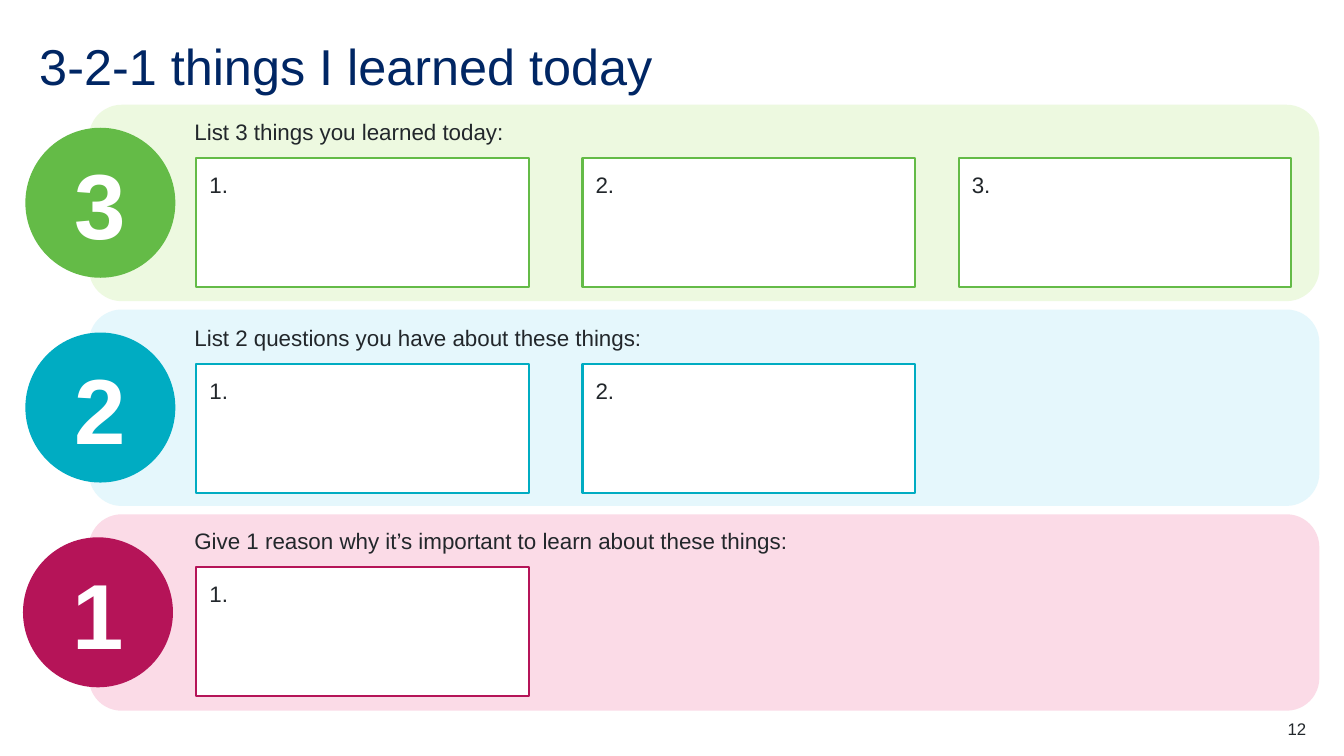
from dataclasses import dataclass

from pptx import Presentation
from pptx.dml.color import RGBColor
from pptx.enum.shapes import MSO_SHAPE
from pptx.enum.text import MSO_ANCHOR, PP_ALIGN
from pptx.shapes.autoshape import Shape
from pptx.slide import Slide
from pptx.util import Cm, Pt

FONT = "Arial"
NAVY, INK, WHITE = "002664", "22272B", "FFFFFF"

BAND_LEFT, BAND_WIDTH, BAND_HEIGHT = 2.24, 31.01, 4.95
FIRST_BAND_TOP, BAND_PITCH = 2.64, 5.16
CIRCLE_SIZE, CIRCLE_DROP = 3.78, 0.58
LABEL_LEFT, LABEL_HEIGHT = 4.57, 1.55
ANSWER_LEFTS = (4.95, 14.68, 24.16)
ANSWER_WIDTH, ANSWER_HEIGHT, ANSWER_DROP = 8.38, 3.25, 1.34
INSET = 0.33


@dataclass
class Prompt:
    count: int
    label: str
    accent: str
    tint: str
    label_top: float
    label_width: float
    circle_left: float


PROMPTS = [
    Prompt(3, "List 3 things you learned today:", "64BB47", "EDF9E0", 2.64, 12.14, 0.64),
    Prompt(2, "List 2 questions you have about these things:", "00ACC2", "E5F7FC", 7.83, 12.14, 0.64),
    Prompt(1, "Give 1 reason why it’s important to learn about these things:", "B51458", "FBDBE7",
           12.95, 16.89, 0.58),
]


def color(value: str) -> RGBColor:
    return RGBColor.from_string(value)


def write(box: Shape, text: str, size: float, ink: str, inset: float = 0, bold: bool = False,
          align: PP_ALIGN = PP_ALIGN.LEFT, anchor: MSO_ANCHOR = MSO_ANCHOR.TOP) -> None:
    frame = box.text_frame
    frame.text = text
    frame.word_wrap = True
    frame.vertical_anchor = anchor
    frame.margin_left = frame.margin_right = frame.margin_top = frame.margin_bottom = Cm(inset)
    para = frame.paragraphs[0]
    para.alignment = align
    font = para.runs[0].font
    font.name, font.size, font.bold = FONT, Pt(size), bold
    font.color.rgb = color(ink)


def add_text_box(page: Slide, left: float, top: float, width: float, height: float) -> Shape:
    return page.shapes.add_textbox(Cm(left), Cm(top), Cm(width), Cm(height))


def add_filled(page: Slide, kind: MSO_SHAPE, left: float, top: float, width: float, height: float,
               fill: str, outline: str | None = None) -> Shape:
    shape = page.shapes.add_shape(kind, Cm(left), Cm(top), Cm(width), Cm(height))
    shape.shadow.inherit = False
    shape.fill.solid()
    shape.fill.fore_color.rgb = color(fill)
    if outline:
        shape.line.color.rgb = color(outline)
        shape.line.width = Pt(1.5)
    else:
        shape.line.fill.background()
    return shape


def draw_prompt(page: Slide, prompt: Prompt, band_top: float) -> None:
    # Tinted band and its label
    add_filled(page, MSO_SHAPE.ROUNDED_RECTANGLE, BAND_LEFT, band_top, BAND_WIDTH, BAND_HEIGHT, prompt.tint)
    label = add_text_box(page, LABEL_LEFT, prompt.label_top, prompt.label_width, LABEL_HEIGHT)
    write(label, prompt.label, 16, INK, INSET)

    # Numbered answer boxes
    for number, left in enumerate(ANSWER_LEFTS[:prompt.count], start=1):
        answer = add_filled(page, MSO_SHAPE.RECTANGLE, left, prompt.label_top + ANSWER_DROP,
                            ANSWER_WIDTH, ANSWER_HEIGHT, WHITE, prompt.accent)
        write(answer, f"{number}.", 16, INK, INSET)

    # Count in a circle
    circle = add_filled(page, MSO_SHAPE.OVAL, prompt.circle_left, band_top + CIRCLE_DROP,
                        CIRCLE_SIZE, CIRCLE_SIZE, prompt.accent)
    write(circle, str(prompt.count), 66, WHITE, bold=True, align=PP_ALIGN.CENTER, anchor=MSO_ANCHOR.MIDDLE)


def main() -> None:
    deck = Presentation()
    deck.slide_width, deck.slide_height = Cm(33.87), Cm(19.05)
    page = deck.slides.add_slide(deck.slide_layouts[6])

    # Title
    title = add_text_box(page, 0.99, 0.99, 31.9, 1.52)
    write(title, "3-2-1 things I learned today", 36, NAVY, anchor=MSO_ANCHOR.MIDDLE)
    title.text_frame.paragraphs[0].line_spacing = 0.9

    # Prompts
    for row, prompt in enumerate(PROMPTS):
        draw_prompt(page, prompt, FIRST_BAND_TOP + row * BAND_PITCH)

    # Page number
    page_number = add_text_box(page, 30.91, 18.11, 2.01, 0.51)
    write(page_number, "12", 12, INK, align=PP_ALIGN.RIGHT)

    deck.save("out.pptx")


if __name__ == "__main__":
    main()
